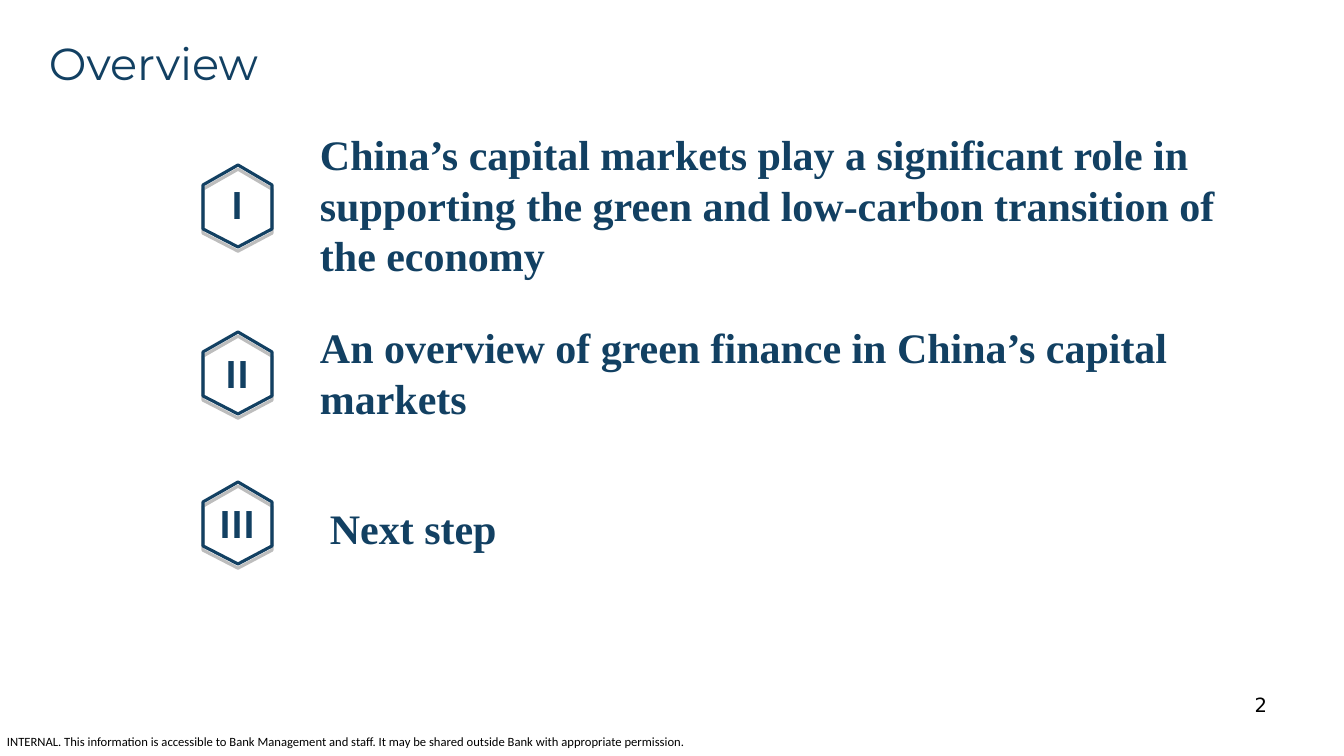
from lxml.etree import SubElement as Sub
from pptx import Presentation as Deck
from pptx.dml.color import RGBColor as Rgb
from pptx.enum.text import PP_ALIGN as Align
from pptx.oxml.ns import qn
from pptx.util import Emu, Pt

UNIT = 12192000 / 1344
HUES = {"navy": "124062", "black": "000000"}
FACES = {"head": "Montserrat", "item": "Times New Roman", "mark": "Noto Sans CJK SC",
         "note": "Calibri", "page": "DejaVu Sans"}
ITEMS = [
    ("I", "China’s capital markets play a significant role in supporting "
          "the green and low-carbon transition of the economy",
     (203, 165, 69, 82), 13, (310, 124, 957, 163)),
    ("II", "An overview of green finance in China’s capital markets",
     (203, 332, 69, 82), 15, (310, 317, 957, 112)),
    ("III", "Next step", (203, 482, 69, 82), 15, (320, 498, 957, 61)),
]


def px(n):
    return Emu(round(n * UNIT))


def write(shapes, box, text, face, size, hue="navy", bold=False,
          align=Align.LEFT, wrap=True, inset=True):
    shape = shapes.add_textbox(*map(px, box))
    frame = shape.text_frame
    frame.word_wrap = wrap
    if not inset:
        frame.margin_left = frame.margin_right = 0
        frame.margin_top = frame.margin_bottom = 0
    frame.text = text
    line = frame.paragraphs[0]
    line.alignment = align
    font = line.runs[0].font
    font.name, font.size, font.bold = FACES[face], Pt(size), bold
    font.color.rgb = Rgb.from_string(HUES[hue])


def shade(shape):
    shape.shadow.inherit = False
    glow = shape._element.spPr.find(qn("a:effectLst"))
    drop = Sub(glow, qn("a:outerShdw"), blurRad="0", dist=str(Pt(3)),
               dir="5400000", algn="t", rotWithShape="0")
    tint = Sub(drop, qn("a:srgbClr"), val=HUES["black"])
    Sub(tint, qn("a:alpha"), val="25000")


def badge(slide, box, mark, drop):
    x, y, w, h = box
    mid = x + w // 2 + 1
    high, low = y + 20, y + 64
    group = slide.shapes.add_group_shape().shapes
    form = group.build_freeform(mid, y, scale=UNIT)
    form.add_line_segments([(x + w, high), (x + w, low), (mid, y + h),
                            (x, low), (x, high)], close=True)
    shape = form.convert_to_shape()
    shape.fill.background()
    shape.line.color.rgb = Rgb.from_string(HUES["navy"])
    shape.line.width = Pt(2.25)
    shade(shape)
    wide = 19 + 13 * len(mark)
    write(group, (mid - wide / 2, y + drop, wide, 54), mark, "mark", 26,
          bold=True, align=Align.CENTER, wrap=False)


def item(slide, mark, text, hex_box, drop, box):
    badge(slide, hex_box, mark, drop)
    write(slide.shapes, box, text, "item", 30, bold=True)


def foot(slide, note_box, page_box):
    write(slide.shapes, note_box,
          "INTERNAL. This information is accessible to Bank Management and staff. "
          "It may be shared outside Bank with appropriate permission.",
          "note", 9, "black", inset=False)
    write(slide.shapes, page_box, "2", "page", 14, "black", align=Align.RIGHT)


def main():
    deck = Deck()
    deck.slide_width, deck.slide_height = px(1344), px(756)
    slide = deck.slides.add_slide(deck.slide_layouts[6])
    write(slide.shapes, (39, 31, 266, 65), "Overview", "head", 32)
    for row in ITEMS:
        item(slide, *row)
    foot(slide, (7, 734, 690, 15), (964, 688, 313, 52))
    deck.save("out.pptx")


if __name__ == "__main__":
    main()
